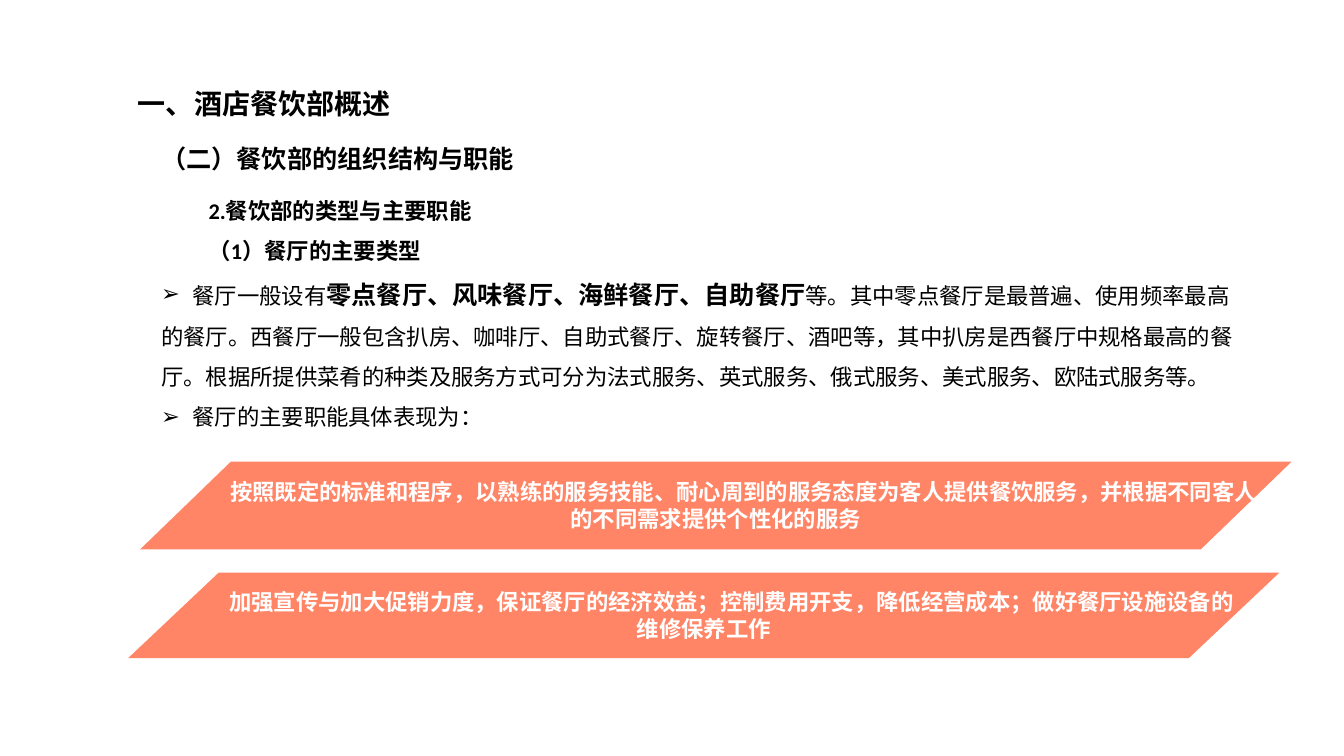
from dataclasses import dataclass

import pptx
import pptx.dml.color
import pptx.enum.text
import pptx.oxml.ns
import pptx.util
from lxml import etree

PX = 9144  # EMU per px, 100 px to the inch


@dataclass(frozen=True)
class Theme:
    ink: str = "000000"
    banner: str = "FF8566"
    banner_text: str = "FFFFFF"
    cjk: str = "Noto Sans CJK SC"
    latin: str = "Calibri"
    plain: str = "Arial"
    title: int = 20
    heading: int = 18
    body: int = 16


THEME = Theme()


@dataclass(frozen=True)
class Run:
    text: str
    size: int = THEME.body
    font: str = THEME.cjk
    bold: bool = True
    color: str = THEME.ink


@dataclass(frozen=True)
class Para:
    runs: tuple[Run, ...]
    margin: int = 0
    indent: int = 0
    spacing: float = 1.0
    bullet: str = ""
    centered: bool = False


@dataclass(frozen=True)
class TextBox:
    left: int
    top: int
    width: int
    height: int
    paras: tuple[Para, ...]


@dataclass(frozen=True)
class Banner:
    left: int
    top: int
    height: int
    lines: tuple[str, str]


BANNER_WIDTH, BANNER_SLANT = 1142, 90
FIRST_LINE_MARGIN = 56
HANGING = 31


def body_para(*runs: Run) -> Para:
    return Para(runs, spacing=1.5)


def bullet_para(*runs: Run) -> Para:
    return Para(runs, HANGING, -HANGING, 1.5, "➢")


def subheading(text: str) -> Para:
    return Para((Run(text, font=THEME.latin),), indent=47, spacing=1.5)


def plain(text: str, font: str = THEME.plain) -> Run:
    return Run(text, font=font, bold=False)


TEXT_BOXES = (
    TextBox(127, 81, 583, 43, (Para((Run("一、酒店餐饮部概述", THEME.title),)),)),
    TextBox(150, 137, 495, 40, (Para((Run("（二）餐饮部的组织结构与职能", THEME.heading),)),)),
    TextBox(150, 177, 1105, 257, (
        subheading("2.餐饮部的类型与主要职能"),
        subheading("（1）餐厅的主要类型"),
        bullet_para(
            plain("餐厅一般设有", THEME.latin),
            Run("零点餐厅、风味餐厅、海鲜餐厅、自助餐厅", THEME.heading, THEME.latin),
            plain("等。", THEME.latin),
            plain("其中零点餐厅是最普遍、使用频率最高"),
        ),
        body_para(plain(
            "的餐厅。西餐厅一般包含扒房、咖啡厅、自助式餐厅、旋转餐厅、酒吧等，"
            "其中扒房是西餐厅中规格最高的餐厅。根据所提供菜肴的种类及服务方式可分为"
            "法式服务、英式服务、俄式服务、美式服务、欧陆式服务等。"
        )),
        bullet_para(plain("餐厅的主要职能具体表现为：")),
    )),
)

BANNERS = (
    Banner(139, 458, 87, (
        "按照既定的标准和程序，以熟练的服务技能、耐心周到的服务态度为客人提供餐饮服务，并根据不同客人",
        "的不同需求提供个性化的服务",
    )),
    Banner(127, 568, 85, (
        "加强宣传与加大促销力度，保证餐厅的经济效益；控制费用开支，降低经营成本；做好餐厅设施设备的",
        "维修保养工作",
    )),
)


def add_run(p: pptx.text.text._Paragraph, run: Run) -> None:
    r = p.add_run()
    r.text = run.text
    r.font.size = pptx.util.Pt(run.size)
    r.font.bold = run.bold
    r.font.color.rgb = pptx.dml.color.RGBColor.from_string(run.color)
    r.font.name = run.font
    props = r._r.get_or_add_rPr()
    props.set("lang", "zh-CN")
    etree.SubElement(props, pptx.oxml.ns.qn("a:ea"), typeface=THEME.cjk)


def fill_text(tf: pptx.text.text.TextFrame, paras: tuple[Para, ...]) -> None:
    for i, para in enumerate(paras):
        p = tf.add_paragraph() if i else tf.paragraphs[0]
        align = pptx.enum.text.PP_ALIGN
        p.alignment = align.CENTER if para.centered else align.LEFT
        p.line_spacing = para.spacing
        props = p._p.get_or_add_pPr()
        props.set("marL", str(para.margin * PX))
        props.set("indent", str(para.indent * PX))
        if para.bullet:
            etree.SubElement(props, pptx.oxml.ns.qn("a:buFont"), typeface=THEME.plain)
            etree.SubElement(props, pptx.oxml.ns.qn("a:buChar"), char=para.bullet)
        for run in para.runs:
            add_run(p, run)


def add_text_box(s: pptx.slide.Slide, box: TextBox) -> None:
    sp = s.shapes.add_textbox(box.left * PX, box.top * PX, box.width * PX, box.height * PX)
    tf = sp.text_frame
    tf.word_wrap = True
    tf.auto_size = pptx.enum.text.MSO_AUTO_SIZE.SHAPE_TO_FIT_TEXT
    fill_text(tf, box.paras)


def add_banner(s: pptx.slide.Slide, banner: Banner) -> None:
    """Draw a slanted band; its first line sits a little right of centre."""
    right, bottom = banner.left + BANNER_WIDTH, banner.top + banner.height
    outline = s.shapes.build_freeform(banner.left + BANNER_SLANT, banner.top, scale=PX)
    outline.add_line_segments(
        [(right, banner.top), (right - BANNER_SLANT, bottom), (banner.left, bottom)]
    )
    sp = outline.convert_to_shape()
    sp.shadow.inherit = False
    sp.fill.solid()
    sp.fill.fore_color.rgb = pptx.dml.color.RGBColor.from_string(THEME.banner)
    sp.line.fill.background()
    tf = sp.text_frame
    tf.word_wrap = True
    tf.vertical_anchor = pptx.enum.text.MSO_ANCHOR.MIDDLE
    tf.margin_left = tf.margin_right = 16 * PX
    tf.margin_top = tf.margin_bottom = 0
    fill_text(tf, tuple(
        Para((Run(line, color=THEME.banner_text),), margin=margin, centered=True)
        for line, margin in zip(banner.lines, (FIRST_LINE_MARGIN, 0))
    ))


def main() -> None:
    prs = pptx.Presentation()
    prs.slide_width, prs.slide_height = 1333 * PX, 750 * PX
    s = prs.slides.add_slide(prs.slide_layouts[6])
    for box in TEXT_BOXES:
        add_text_box(s, box)
    for banner in BANNERS:
        add_banner(s, banner)
    prs.save("out.pptx")


if __name__ == "__main__":
    main()
